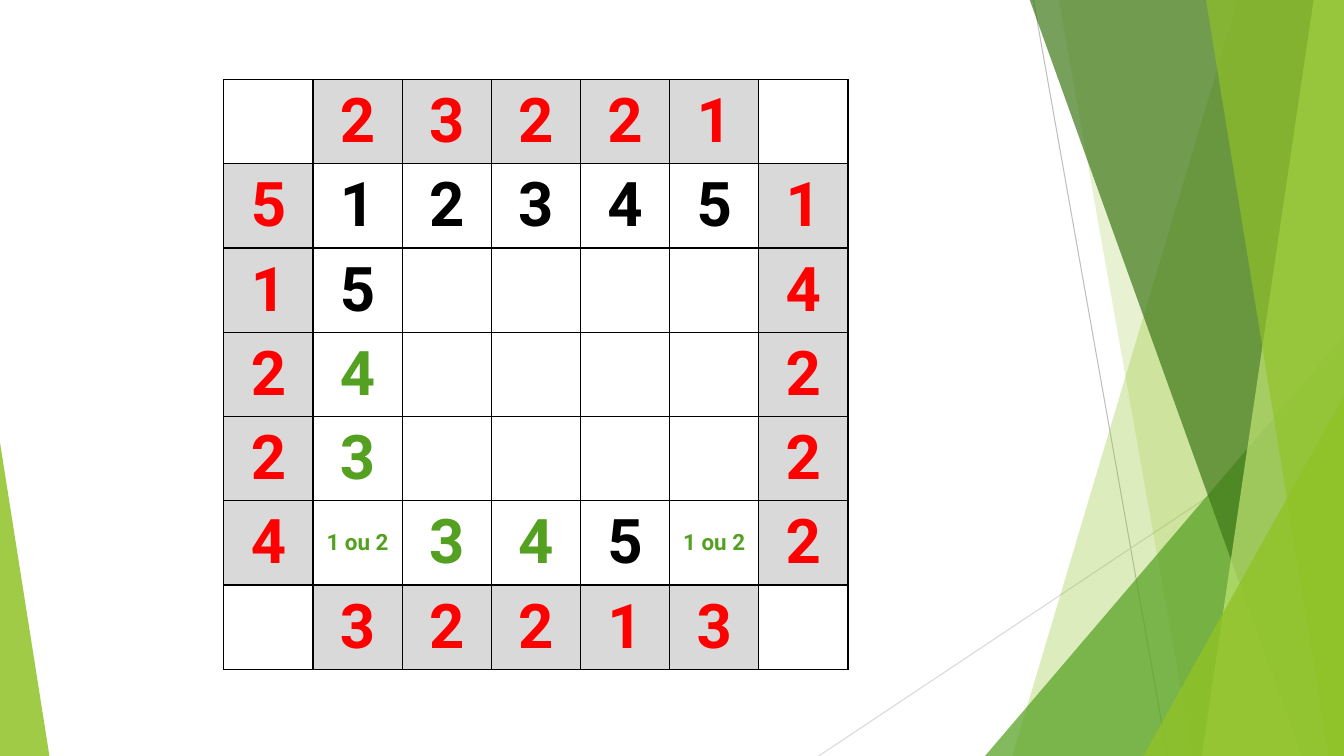
from lxml.etree import SubElement
from pptx import Presentation
from pptx.dml.color import RGBColor
from pptx.enum.shapes import MSO_CONNECTOR, MSO_SHAPE
from pptx.enum.text import MSO_ANCHOR, PP_ALIGN
from pptx.oxml import parse_xml
from pptx.oxml.ns import nsdecls, qn
from pptx.util import Inches, Pt

BLACK = RGBColor(0x00, 0x00, 0x00)
RED = RGBColor(0xFF, 0x00, 0x00)
GREEN = RGBColor(0x54, 0xA0, 0x21)
LIME = RGBColor(0x90, 0xC2, 0x26)
DARK = RGBColor(0x3F, 0x78, 0x19)
PALE = RGBColor(0xC0, 0xE4, 0x74)
SILVER = RGBColor(0xBF, 0xBF, 0xBF)
GREY = RGBColor(0xD9, 0xD9, 0xD9)

WIDE, HIGH = 13.33, 7.5

# Puzzle rows: the outer ring holds the clues
PUZZLE = [
    ["", "2", "3", "2", "2", "1", ""],
    ["5", "1", "2", "3", "4", "5", "1"],
    ["1", "5", "", "", "", "", "4"],
    ["2", "4", "", "", "", "", "2"],
    ["2", "3", "", "", "", "", "2"],
    ["4", "1 ou 2", "3", "4", "5", "1 ou 2", "2"],
    ["", "3", "2", "2", "1", "3", ""],
]
# Row and column of the newly deduced cells
DEDUCED = {(3, 1), (4, 1), (5, 1), (5, 2), (5, 3), (5, 5)}


def paint(shape, color, alpha):
    """Fill a shape with a see-through colour, without outline."""
    shape.shadow.inherit = False
    shape.line.fill.background()
    shape.fill.solid()
    shape.fill.fore_color.rgb = color
    tone = shape.fill._xPr.find(qn("a:solidFill"))[0]
    SubElement(tone, qn("a:alpha")).set("val", str(alpha * 1000))


def add_line(slide, start, end, color):
    ends = [Inches(v) for v in (*start, *end)]
    line = slide.shapes.add_connector(MSO_CONNECTOR.STRAIGHT, *ends)
    line.line.color.rgb = color
    line.line.width = Pt(0.75)
    SubElement(line._element.spPr, qn("a:effectLst"))


def add_band(slide, top, foot, color, alpha):
    """Add a band from a slanted left edge to the right slide edge."""
    corners = [(top, -0.01), (WIDE, -0.01), (WIDE, HIGH), (foot, HIGH)]
    points = [(Inches(x), Inches(y)) for x, y in corners]
    band = slide.shapes.build_freeform(*points[0])
    band.add_line_segments(points[1:], close=True)
    paint(band.convert_to_shape(), color, alpha)


def add_wedge(slide, left, top, width, apex, color, alpha):
    """Add a triangle that stands on the bottom slide edge."""
    box = [Inches(v) for v in (left, top, width, HIGH - top)]
    wedge = slide.shapes.add_shape(MSO_SHAPE.ISOSCELES_TRIANGLE, *box)
    wedge.adjustments[0] = apex
    paint(wedge, color, alpha)


def put_text(cell, text, size=44, color=BLACK, font="Roboto", bold=True):
    cell.vertical_anchor = MSO_ANCHOR.MIDDLE
    para = cell.text_frame.paragraphs[0]
    para.alignment = PP_ALIGN.CENTER
    run = para.add_run()
    run.text = text
    run.font.size = Pt(size)
    run.font.name = font
    run.font.bold = bold
    run.font.color.rgb = color


def add_border(cell):
    props = cell._tc.get_or_add_tcPr()
    for spot, side in enumerate(("lnL", "lnR", "lnT", "lnB")):
        props.insert(spot, parse_xml(
            f'<a:{side} {nsdecls("a")} w="{Pt(1)}"><a:solidFill>'
            f'<a:srgbClr val="{BLACK}"/></a:solidFill></a:{side}>'))


def add_puzzle(slide, left, top, width, height):
    count = len(PUZZLE)
    box = [Inches(v) for v in (left, top, width, height)]
    table = slide.shapes.add_table(count, count, *box).table
    table.first_row = table.horz_banding = False
    for row, values in enumerate(PUZZLE):
        for col, text in enumerate(values):
            cell = table.cell(row, col)
            clue = text and (row in (0, count - 1) or col in (0, count - 1))
            if clue:
                cell.fill.solid()
                cell.fill.fore_color.rgb = GREY
            else:
                cell.fill.background()
            add_border(cell)
            if text:
                color = RED if clue else GREEN if (row, col) in DEDUCED else BLACK
                put_text(cell, text, size=16 if len(text) > 1 else 44, color=color)


def main():
    deck = Presentation()
    deck.slide_width, deck.slide_height = Inches(WIDE), Inches(HIGH)
    slide = deck.slides.add_slide(deck.slide_layouts[6])

    # Green facets on the right, from back to front
    add_line(slide, (10.25, 0), (11.58, HIGH), SILVER)
    add_line(slide, (WIDE, 4.03), (8.12, HIGH), GREY)
    add_band(slide, 12.28, 10.04, LIME, 30)
    add_band(slide, 10.5, 11.83, LIME, 20)
    add_wedge(slide, 9.77, 3.33, 3.56, 1, GREEN, 72)
    add_band(slide, 10.21, 12.91, DARK, 70)
    add_band(slide, 13.03, 11.92, PALE, 70)
    add_band(slide, 11.96, 13.18, LIME, 65)
    add_wedge(slide, 11.34, 3.93, 1.99, 1, LIME, 80)

    # Green facet on the left
    add_wedge(slide, 0, 4.39, 0.49, 0, LIME, 85)

    # Number puzzle
    add_puzzle(slide, 2.22, 0.79, 6.19, 5.85)
    deck.save("out.pptx")


if __name__ == "__main__":
    main()
